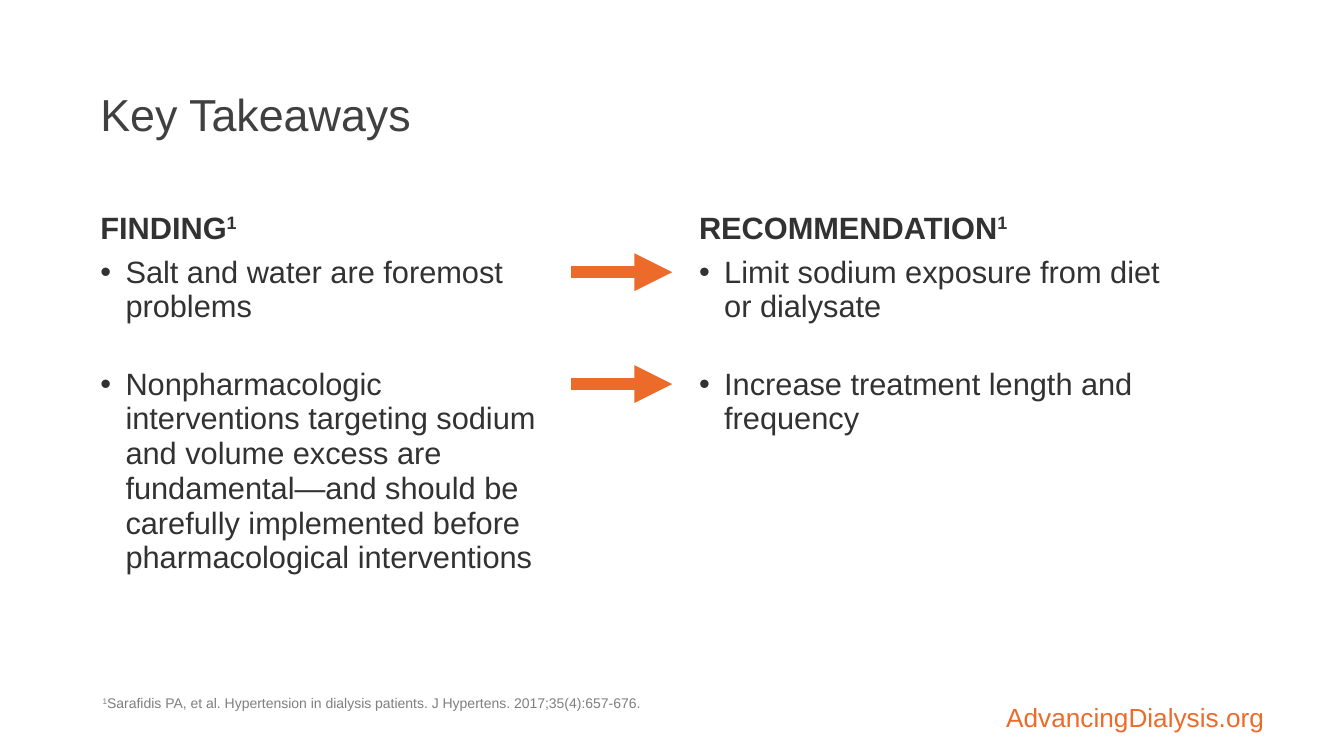
from lxml import etree
from pptx import Presentation
from pptx.dml.color import RGBColor
from pptx.enum.shapes import MSO_CONNECTOR
from pptx.enum.text import MSO_ANCHOR, PP_ALIGN
from pptx.oxml.ns import qn
from pptx.util import Pt

STRAIGHT = MSO_CONNECTOR.STRAIGHT
MIDDLE, BOTTOM = MSO_ANCHOR.MIDDLE, MSO_ANCHOR.BOTTOM
LEFT, RIGHT = PP_ALIGN.LEFT, PP_ALIGN.RIGHT
ORANGE = RGBColor(0xED, 0x6B, 0x2A)
TITLE_GRAY = RGBColor(0x40, 0x40, 0x40)
TEXT_GRAY = RGBColor(0x32, 0x32, 0x32)
NOTE_GRAY = RGBColor(0x7F, 0x7F, 0x7F)


def add_text_frame(left, top, width, height, side_inset, top_inset):
    box = slide.shapes.add_textbox(Pt(left), Pt(top), Pt(width), Pt(height))
    frame = box.text_frame
    frame.word_wrap = True
    frame.margin_left = frame.margin_right = Pt(side_inset)
    frame.margin_top = frame.margin_bottom = Pt(top_inset)
    return frame


def style(paragraph, size, color, bold=False):
    paragraph.font.name = "Arial"
    paragraph.font.size = Pt(size)
    paragraph.font.bold = bold
    paragraph.font.color.rgb = color


presentation = Presentation()
presentation.slide_width = Pt(960)
presentation.slide_height = Pt(540)
slide = presentation.slides.add_slide(presentation.slide_layouts[5])

title = slide.shapes.title
title.left, title.top, title.width, title.height = Pt(66.24), Pt(28.8), Pt(612), Pt(104.4)
title_frame = title.text_frame
title_frame.text = "Key Takeaways"
title_frame.vertical_anchor = MIDDLE
title_frame.margin_left = title_frame.margin_right = Pt(5.4)
title_frame.paragraphs[0].alignment = LEFT
style(title_frame.paragraphs[0], 32, TITLE_GRAY)

site_frame = add_text_frame(584.64, 479.5, 326.16, 43.9, 7.9, 0)
site_frame.vertical_anchor = BOTTOM
site = site_frame.paragraphs[0]
site.text = "AdvancingDialysis.org"
site.alignment = RIGHT
site.line_spacing = 0.9
style(site, 18.7, ORANGE)

columns = [
    (66.24, 331.92, "FINDING", [
        "Salt and water are foremost problems",
        "Nonpharmacologic interventions targeting sodium and volume excess are "
        "fundamental—and should be carefully implemented before pharmacological interventions",
    ]),
    (493.92, 406.08, "RECOMMENDATION", [
        "Limit sodium exposure from diet\vor dialysate",
        "Increase treatment length and frequency",
    ]),
]
for left, width, heading_text, points in columns:
    frame = add_text_frame(left, 148.32, width, 334.08, 5.4, 2.7)
    heading = frame.paragraphs[0]
    heading.line_spacing = 0.94
    heading.add_run().text = heading_text
    mark = heading.add_run()
    mark.text = "1"
    mark.font._element.set("baseline", "30000")
    style(heading, 22, TEXT_GRAY, True)
    for point, space_before in zip(points, (6.6, 30.4)):
        paragraph = frame.add_paragraph()
        paragraph.text = point
        paragraph.line_spacing = 0.94
        paragraph.space_before = Pt(space_before)
        properties = paragraph._p.get_or_add_pPr()
        properties.set("marL", str(Pt(18)))
        properties.set("indent", str(Pt(-18)))
        etree.SubElement(properties, qn("a:buFont"), typeface="Arial")
        etree.SubElement(properties, qn("a:buChar"), char="•")
        style(paragraph, 22, TEXT_GRAY)

for arrow_y in (194.4, 274.32):
    arrow = slide.shapes.add_connector(STRAIGHT, Pt(408.24), Pt(arrow_y), Pt(480.24), Pt(arrow_y))
    arrow.line.color.rgb = ORANGE
    arrow.line.width = Pt(9)
    etree.SubElement(arrow.line._get_or_add_ln(), qn("a:tailEnd"), type="triangle")
    etree.SubElement(arrow._element.spPr, qn("a:effectLst"))

note = add_text_frame(66.24, 493.92, 598.32, 22.32, 7.2, 3.6).paragraphs[0]
note.line_spacing = 0.9
note_mark = note.add_run()
note_mark.text = "1"
note_mark.font._element.set("baseline", "30000")
note.add_run().text = (
    "Sarafidis PA, et al. Hypertension in dialysis patients. J Hypertens. 2017;35(4):657-676."
)
style(note, 10, NOTE_GRAY)

presentation.save("out.pptx")
